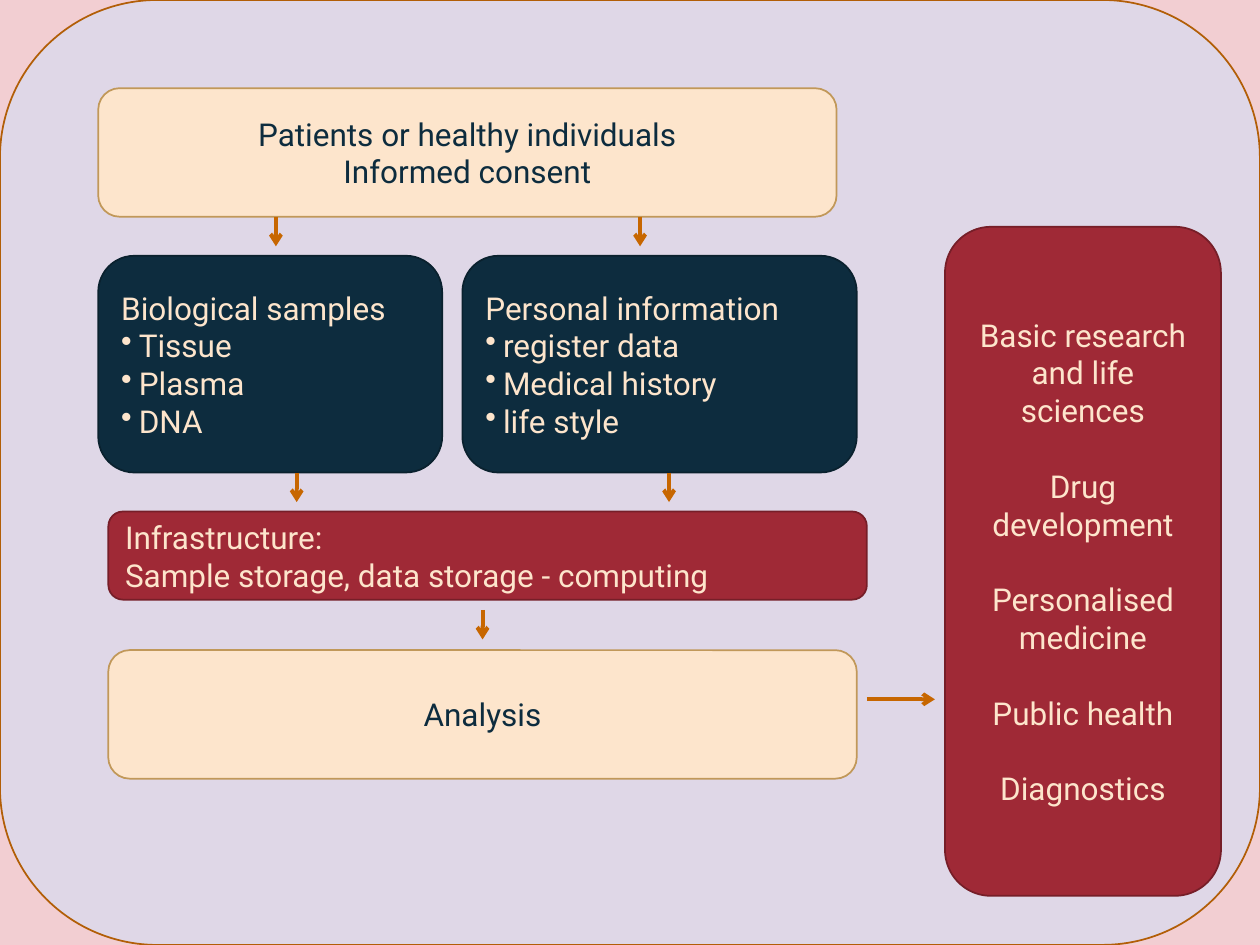
from collections import namedtuple
from lxml.etree import SubElement as Sub
from pptx import Presentation
from pptx.dml.color import RGBColor as RGB
from pptx.enum.shapes import MSO_CONNECTOR as Link, MSO_SHAPE as Kind
from pptx.enum.text import MSO_ANCHOR as Anchor, PP_ALIGN as Align
from pptx.oxml.ns import qn
from pptx.util import Inches, Pt

HUES = {
    "back": "F2CED2", "lilac": "DFD7E7", "rim": "B25E07", "arrow": "C76600",
    "cream": "FDE5CC", "tan": "C19859", "navy": "0D2C3E", "ink": "0A212E",
    "red": "9F2936", "wine": "761E28",
}
TONES = {
    "cream": ("cream", "tan", "navy"),
    "navy": ("navy", "ink", "cream"),
    "red": ("red", "wine", "cream"),
}
COLS, ROWS = 100, 75
WIDTH, HEIGHT = Inches(10), Inches(7.5)
Box = namedtuple("Box", "x y w h")


def hue(name):
    """Return the named colour."""
    return RGB.from_string(HUES[name])


def span(cols, rows):
    """Turn grid columns and rows into slide lengths."""
    return round(cols * WIDTH / COLS), round(rows * HEIGHT / ROWS)


def panel(slide, box, fill, edge):
    """Draw a rounded panel that fills the box."""
    shape = slide.shapes.add_shape(
        Kind.ROUNDED_RECTANGLE, *span(box.x, box.y), *span(box.w, box.h))
    shape.shadow.inherit = False
    shape.fill.solid()
    shape.fill.fore_color.rgb = hue(fill)
    shape.line.color.rgb = hue(edge)
    shape.line.width = Pt(1)
    return shape


def bullet(para):
    """Give a paragraph a hanging bullet."""
    props = para._p.get_or_add_pPr()
    props.set("marL", str(Inches(0.14)))
    props.set("indent", str(-Inches(0.14)))
    Sub(props, qn("a:buChar"), char="•")


def node(slide, box, tone, lines, align=Align.LEFT, list_from=None, gap=0):
    """Draw a panel with its lines of text."""
    fill, edge, ink = TONES[tone]
    frame = panel(slide, box, fill, edge).text_frame
    frame.word_wrap = True
    frame.vertical_anchor = Anchor.MIDDLE
    for i, line in enumerate(lines):
        para = frame.paragraphs[0] if i == 0 else frame.add_paragraph()
        para.text = line
        para.alignment = align
        if list_from is not None and i >= list_from:
            bullet(para)
        if i and gap:
            para.space_before = Pt(gap)
        para.font.size = Pt(18)
        para.font.name = "Roboto"
        para.font.color.rgb = hue(ink)


def arrow(slide, x, y, right=0, down=0):
    """Draw an arrow from a grid point."""
    line = slide.shapes.add_connector(
        Link.STRAIGHT, *span(x, y), *span(x + right, y + down))
    line.line.color.rgb = hue("arrow")
    line.line.width = Pt(2.25)
    Sub(line.line._get_or_add_ln(), qn("a:tailEnd"), type="arrow")
    Sub(line._element.spPr, qn("a:effectLst"))


def flow(slide, box):
    """Place the steps from consent to analysis and their arrows."""
    def part(x, y, w, h):
        """Return a box set off from the corner of the region."""
        return Box(box.x + x, box.y + y, w, h)

    node(slide, part(0, 0, 58.6, 10.2), "cream",
         ["Patients or healthy individuals", "Informed consent"], Align.CENTER)
    node(slide, part(0, 13.3, 27.3, 17.2), "navy",
         ["Biological samples", "Tissue", "Plasma", "DNA"], list_from=1)
    node(slide, part(28.9, 13.3, 31.3, 17.2), "navy",
         ["Personal information", "register data", "Medical history",
          "life style"], list_from=1)
    node(slide, part(0.8, 33.6, 60.2, 7), "red",
         ["Infrastructure:", "Sample storage, data storage - computing"])
    node(slide, part(0.8, 44.6, 59.4, 10.2), "cream", ["Analysis"], Align.CENTER)
    for x, y in ((14.1, 10.2), (43, 10.2), (15.75, 30.5), (45.3, 30.5),
                 (30.5, 41.4)):
        arrow(slide, box.x + x, box.y + y, down=2.35)
    arrow(slide, box.x + box.w, box.y + 48.5, right=5.4)


def goals(slide, box):
    """Place the panel of fields that gain from the analysis."""
    node(slide, box, "red",
         ["Basic research and life sciences", "Drug development",
          "Personalised medicine", "Public health", "Diagnostics"],
         Align.CENTER, gap=21.6)


def main():
    """Build the slide and save it."""
    deck = Presentation()
    deck.slide_width, deck.slide_height = WIDTH, HEIGHT
    slide = deck.slides.add_slide(deck.slide_layouts[6])
    slide.background.fill.solid()
    slide.background.fill.fore_color.rgb = hue("back")
    panel(slide, Box(0, 0, COLS, ROWS), "lilac", "rim")
    flow(slide, Box(7.8, 7, 61, 54.8))
    goals(slide, Box(75, 18, 21.9, 53.1))
    deck.save("out.pptx")


if __name__ == "__main__":
    main()
